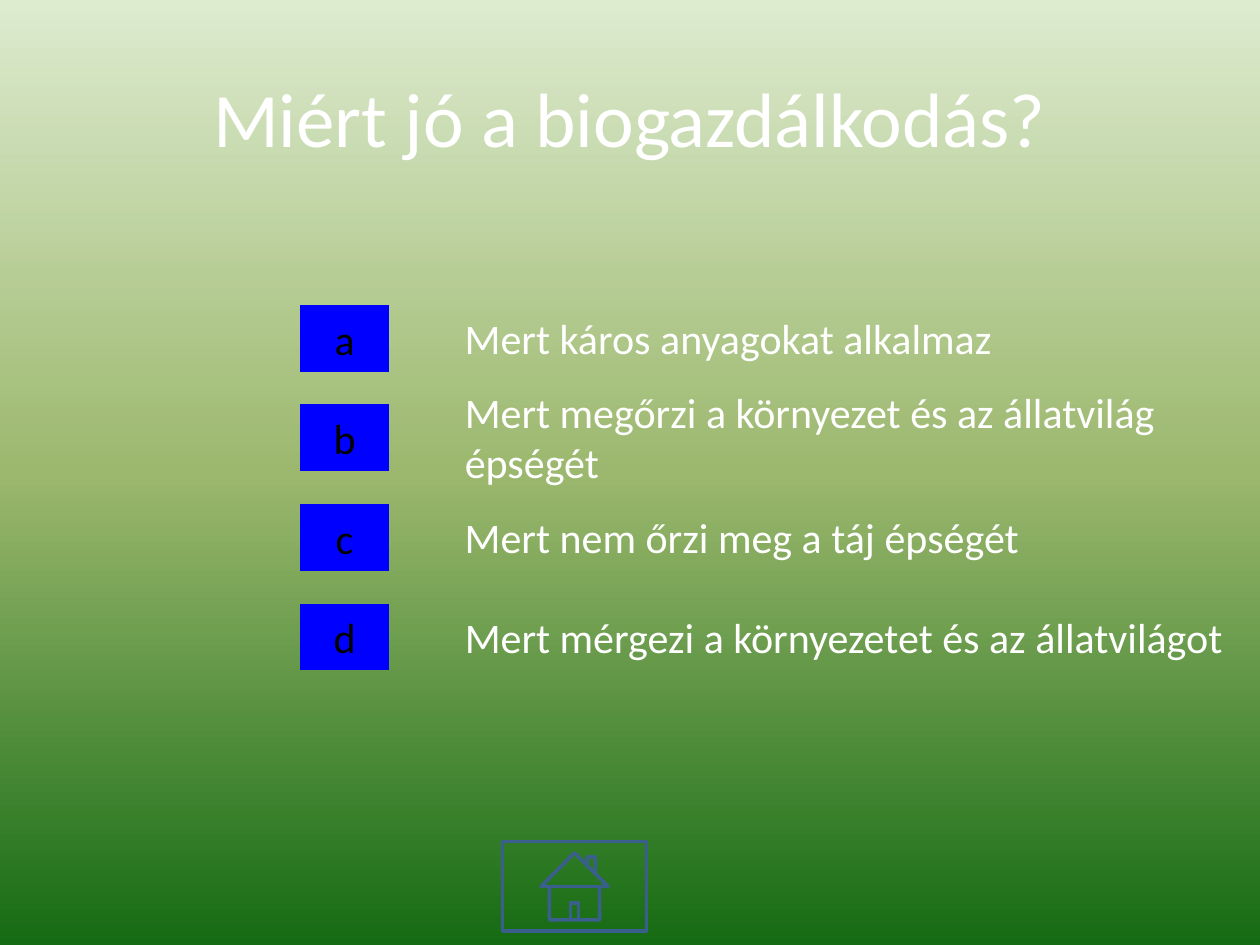
from copy import deepcopy

from pptx import Presentation
from pptx.dml.color import RGBColor
from pptx.enum.shapes import MSO_SHAPE
from pptx.enum.text import MSO_ANCHOR, PP_ALIGN
from pptx.oxml.ns import qn
from pptx.util import Inches, Pt

BLANK_BUTTON = MSO_SHAPE.ACTION_BUTTON_CUSTOM
HOME_BUTTON = MSO_SHAPE.ACTION_BUTTON_HOME
CENTER, LEFT = PP_ALIGN.CENTER, PP_ALIGN.LEFT
MIDDLE, TOP = MSO_ANCHOR.MIDDLE, MSO_ANCHOR.TOP

QUESTION = "Miért jó a biogazdálkodás?"
# letter, answer lines, width of the answer box
ANSWERS = [
    ("a", ["Mert káros anyagokat alkalmaz"], 5.3),
    ("b", ["Mert megőrzi a környezet és az állatvilág", "épségét"], 6.31),
    ("c", ["Mert nem őrzi meg a táj épségét"], 5.3),
    ("d", ["Mert mérgezi a környezetet és az állatvilágot"], 6.78),
]
GRADIENT = [(0, "DDEBCF"), (0.5, "9CB86E"), (1, "156B13")]
WHITE, BLACK, BLUE, HOME_LINE = "FFFFFF", "000000", "0000FF", "3A5F8C"

SLIDE_WIDTH, SLIDE_HEIGHT = 10, 7.5
BUTTON_LEFT, BUTTON_WIDTH, BUTTON_HEIGHT = 2.38, 0.71, 0.53
FIRST_ROW, ROW_PITCH = 2.42, 0.79
LINE_HEIGHT, BOX_PADDING = 0.41, 0.1
ANSWER_INDENT = 0.5


def color(value):
    return RGBColor.from_string(value)


def inches(*lengths):
    return [Inches(length) for length in lengths]


def write(shape, lines, size, font_color, align, anchor, indent=0):
    frame = shape.text_frame
    frame.word_wrap = True
    frame.vertical_anchor = anchor
    frame.text = "\n".join(lines)
    for para in frame.paragraphs:
        para.alignment = align
        if indent:
            para.level = 1
            para._p.get_or_add_pPr().set("marL", str(Inches(indent)))
        for span in para.runs:
            for name, value in {"size": Pt(size), "name": "Calibri"}.items():
                setattr(span.font, name, value)
            span.font.color.rgb = color(font_color)


def paint_background(page):
    fill = page.background.fill
    fill.gradient()
    fill.gradient_angle = 270
    stop_list = next(page.element.iter(qn("a:gsLst")))
    stop_list.append(deepcopy(stop_list[-1]))
    for stop, (position, value) in zip(fill.gradient_stops, GRADIENT):
        stop.position = position
        stop.color.rgb = color(value)


def add_answer(page, row, letter, lines, width):
    top = FIRST_ROW + row * ROW_PITCH
    button = page.shapes.add_shape(
        BLANK_BUTTON, *inches(BUTTON_LEFT, top, BUTTON_WIDTH, BUTTON_HEIGHT))
    button.shadow.inherit = False
    button.fill.solid()
    button.fill.fore_color.rgb = color(BLUE)
    button.line.fill.background()
    write(button, [letter], 24, BLACK, CENTER, MIDDLE)

    height = len(lines) * LINE_HEIGHT + BOX_PADDING
    middle = top + BUTTON_HEIGHT / 2
    box = page.shapes.add_textbox(
        *inches(BUTTON_LEFT + BUTTON_WIDTH, middle - height / 2, width, height))
    write(box, lines, 24, WHITE, LEFT, TOP, ANSWER_INDENT)


def add_home_button(page):
    home = page.shapes.add_shape(HOME_BUTTON, *inches(3.99, 6.68, 1.14, 0.71))
    home.shadow.inherit = False
    home.fill.background()
    home.line.color.rgb = color(HOME_LINE)
    home.line.width = Pt(2)


def main():
    deck = Presentation()
    deck.slide_width, deck.slide_height = inches(SLIDE_WIDTH, SLIDE_HEIGHT)
    page = deck.slides.add_slide(deck.slide_layouts[5])
    paint_background(page)

    title = page.shapes.title
    title.left, title.top, title.width, title.height = inches(0.5, 0.3, 9, 1.25)
    write(title, [QUESTION], 44, WHITE, CENTER, MIDDLE)

    for row, answer in enumerate(ANSWERS):
        add_answer(page, row, *answer)
    add_home_button(page)
    deck.save("out.pptx")


if __name__ == "__main__":
    main()
